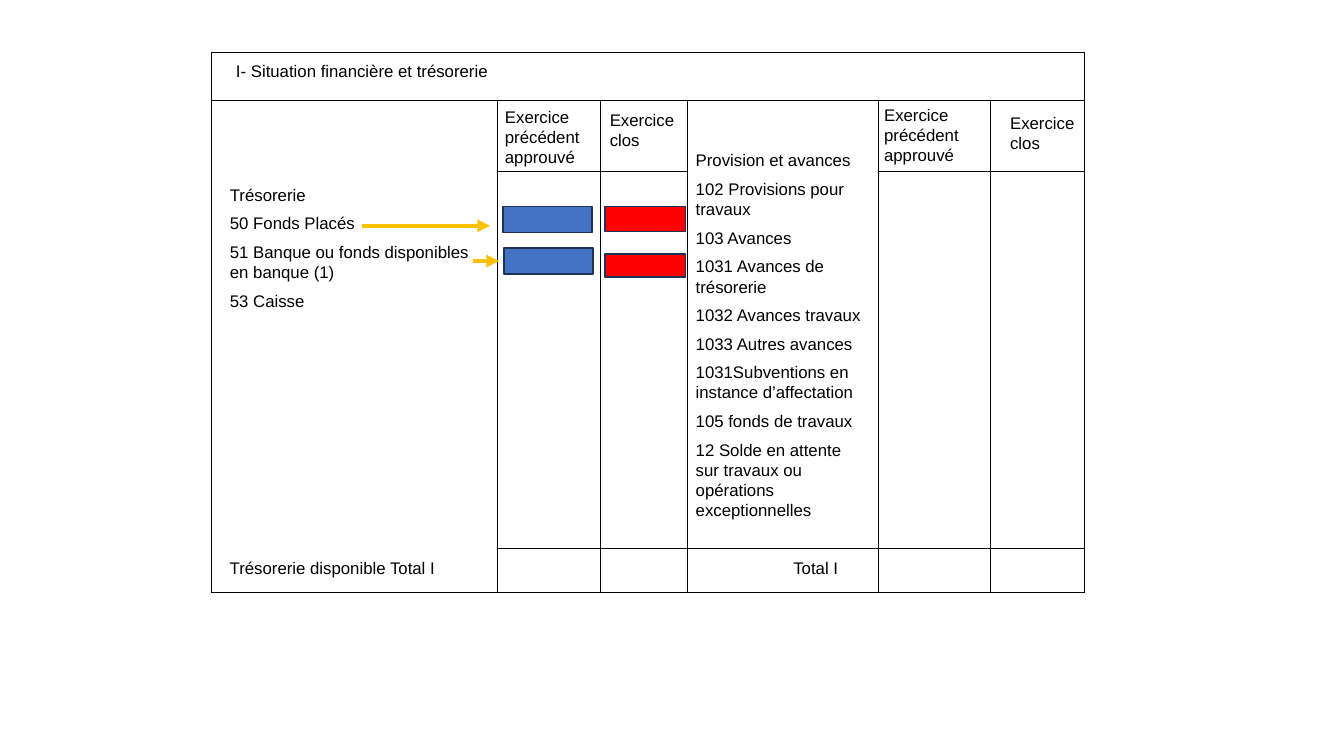
from lxml.etree import SubElement
from pptx import Presentation
from pptx.dml.color import RGBColor
from pptx.enum.shapes import MSO_CONNECTOR, MSO_SHAPE
from pptx.enum.text import MSO_ANCHOR, MSO_AUTO_SIZE, PP_ALIGN
from pptx.oxml.ns import qn
from pptx.util import Inches, Pt

COLORS = {"ink": "000000", "arrow": "FFC000", "previous": "4472C4",
          "closed": "FF0000", "outline": "1E3256"}

HEADING = ["I- Situation financière et trésorerie"]
TREASURY = [
    "Trésorerie",
    "50 Fonds Placés",
    "51 Banque ou fonds disponibles en banque (1)",
    "53 Caisse",
]
PROVISIONS = [
    "Provision et avances",
    "102 Provisions pour travaux",
    "103 Avances",
    "1031 Avances de trésorerie",
    "1032 Avances travaux",
    "1033 Autres avances",
    "1031Subventions en instance d’affectation",
    "105 fonds de travaux",
    "12 Solde en attente sur travaux ou opérations exceptionnelles",
]
PREVIOUS_YEAR = "Exercice précédent approuvé"
CLOSED_YEAR = "Exercice clos"
LABELS = [
    (PREVIOUS_YEAR, (4.91, 1.01, 1.5, 0.71)),
    (CLOSED_YEAR, (5.95, 1.04, 0.93, 0.5)),
    (PREVIOUS_YEAR, (8.67, 0.99, 1.42, 0.71)),
    (CLOSED_YEAR, (9.92, 1.07, 0.87, 0.5)),
    ("Trésorerie disponible Total I", (2.18, 5.48, 2.52, 0.3)),
    ("Total I", (7.77, 5.48, 0.71, 0.3)),
]

LEFT, RIGHT, TOP, BOTTOM = 2.1, 10.76, 0.52, 5.88
HEADER_TOP, HEADER_BOTTOM, TOTAL_TOP = 1.0, 1.7, 5.44
COLUMN_EDGES = [4.93, 5.96, 6.82, 8.71, 9.82]
RULES = [
    (LEFT, TOP, RIGHT, TOP),
    (LEFT, BOTTOM, RIGHT, BOTTOM),
    (LEFT, TOP, LEFT, BOTTOM),
    (RIGHT, TOP, RIGHT, BOTTOM),
    (LEFT, HEADER_TOP, RIGHT, HEADER_TOP),
    (COLUMN_EDGES[0], HEADER_BOTTOM, COLUMN_EDGES[2], HEADER_BOTTOM),
    (COLUMN_EDGES[3], HEADER_BOTTOM, RIGHT, HEADER_BOTTOM),
    (COLUMN_EDGES[0], TOTAL_TOP, RIGHT, TOTAL_TOP),
] + [(x, HEADER_TOP, x, BOTTOM) for x in COLUMN_EDGES]
ARROWS = [(3.59, 2.24, 4.86, 2.24), (4.69, 2.59, 4.95, 2.59)]
AMOUNTS = [
    ("previous", (4.99, 2.05, 0.88, 0.26)),
    ("previous", (5.0, 2.46, 0.88, 0.26)),
    ("closed", (6.0, 2.05, 0.8, 0.25)),
    ("closed", (6.0, 2.52, 0.8, 0.23)),
]


def color(name):
    return RGBColor.from_string(COLORS[name])


def inches(values):
    return [Inches(value) for value in values]


def write(shape, lines):
    frame = shape.text_frame
    frame.text = "\n".join(lines)
    frame.word_wrap = True
    frame.auto_size = MSO_AUTO_SIZE.NONE
    frame.vertical_anchor = MSO_ANCHOR.TOP
    for paragraph in frame.paragraphs:
        paragraph.alignment = PP_ALIGN.LEFT
        paragraph.space_before = Pt(6)
        paragraph.font.name = "Arial"
        paragraph.font.size = Pt(12)
        paragraph.font.color.rgb = color("ink")


def fill_placeholder(placeholder, lines, box):
    placeholder.left, placeholder.top, placeholder.width, placeholder.height = inches(box)
    write(placeholder, lines)
    for paragraph in placeholder.text_frame.paragraphs:
        properties = paragraph._p.get_or_add_pPr()
        properties.set("marL", "0")
        properties.set("indent", "0")
        bullet = properties.makeelement(qn("a:buNone"), {})
        properties.insert_element_before(bullet, "a:tabLst", "a:defRPr", "a:extLst")


def draw_line(ends, ink, width):
    line = slide.shapes.add_connector(MSO_CONNECTOR.STRAIGHT, *inches(ends))
    line.line.color.rgb = color(ink)
    line.line.width = Pt(width)
    SubElement(line._element.spPr, qn("a:effectLst"))
    return line


prs = Presentation()
prs.slide_width, prs.slide_height = inches((13.33, 7.5))
slide = prs.slides.add_slide(prs.slide_layouts[3])

heading, treasury, provisions = list(slide.placeholders)
fill_placeholder(heading, HEADING, (2.24, 0.55, 2.76, 0.3))
fill_placeholder(treasury, TREASURY, (2.18, 1.78, 2.68, 1.7))
fill_placeholder(provisions, PROVISIONS, (6.8, 1.44, 1.89, 3.94))

for label, box in LABELS:
    write(slide.shapes.add_textbox(*inches(box)), [label])

for ends in RULES:
    draw_line(ends, "ink", 0.75)

for ends in ARROWS:
    arrow = draw_line(ends, "arrow", 3)
    SubElement(arrow.line._get_or_add_ln(), qn("a:tailEnd"), type="triangle")

for year, box in AMOUNTS:
    amount = slide.shapes.add_shape(MSO_SHAPE.RECTANGLE, *inches(box))
    amount.shadow.inherit = False
    amount.fill.solid()
    amount.fill.fore_color.rgb = color(year)
    amount.line.color.rgb = color("outline")
    amount.line.width = Pt(1)

prs.save("out.pptx")
